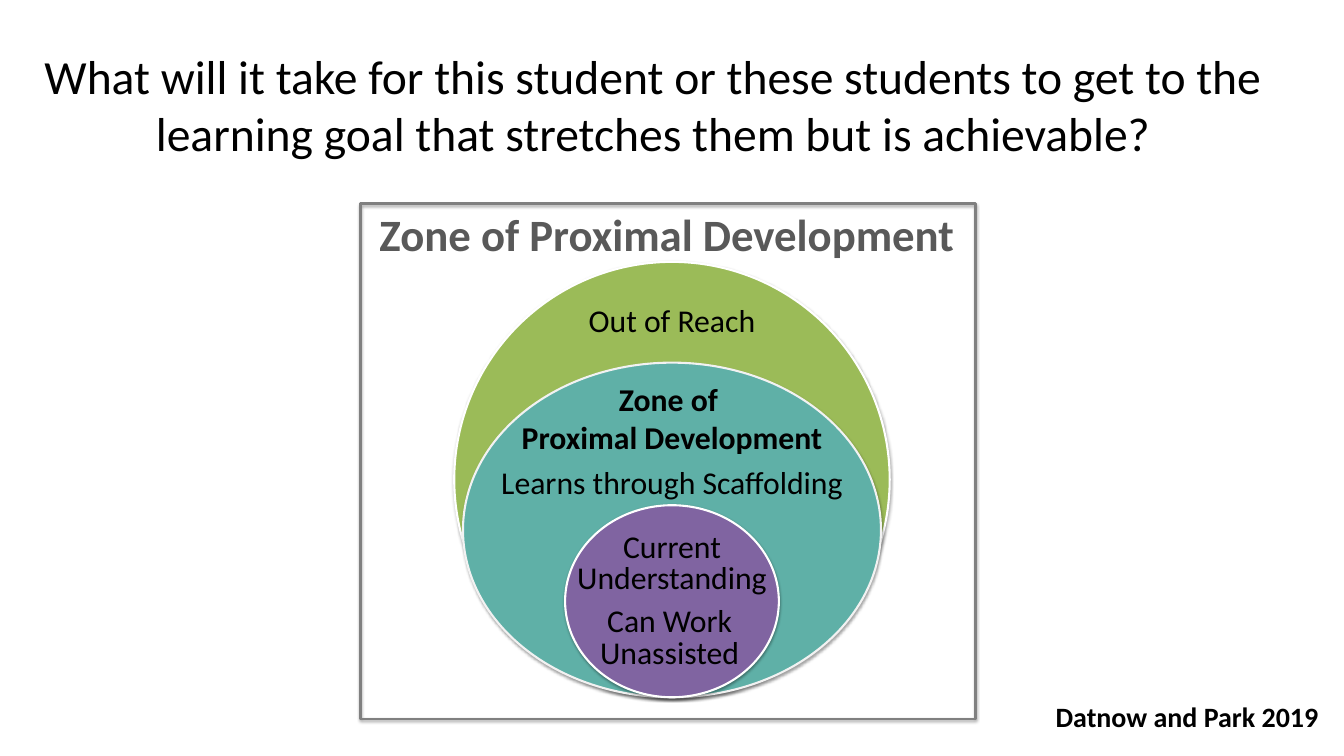
from dataclasses import dataclass

from lxml.etree import SubElement
from pptx import Presentation
from pptx.dml.color import RGBColor as Rgb
from pptx.enum.shapes import MSO_SHAPE as Shape
from pptx.enum.text import MSO_ANCHOR as Anchor, PP_ALIGN as Align
from pptx.oxml.ns import qn
from pptx.util import Cm, Pt


@dataclass(frozen=True)
class Theme:
    font: str = "Calibri"
    ink: str = "000000"
    gray: str = "595959"
    frame: str = "808080"
    white: str = "FFFFFF"
    pale: str = "F2F2F2"
    green: str = "9BBB58"
    teal: str = "5FB0A7"
    purple: str = "8064A1"
    title: int = 51
    head: int = 48
    label: int = 34
    credit: int = 30


@dataclass(frozen=True)
class Box:
    left: float
    top: float
    width: float
    height: float

    def cm(self) -> tuple:
        return Cm(self.left), Cm(self.top), Cm(self.width), Cm(self.height)


@dataclass(frozen=True)
class Ring:
    width: float
    height: float
    fill: str
    line: str


@dataclass(frozen=True)
class Label:
    box: Box
    lines: tuple
    size: int
    color: str
    bold: bool = False
    align: Align = Align.CENTER
    anchor: Anchor = Anchor.TOP
    pitch: int | None = None


LOOK = Theme()
MID = 25.4      # shared axis of the rings, cm
BASE = 26.36    # shared bottom of the rings, cm


def center(top: float, width: float, height: float, mid: float = MID) -> Box:
    return Box(mid - width / 2, top, width, height)


def note(top: float, height: float, *lines: str, width: float = 16.46,
         mid: float = MID, bold: bool = False, pitch: int | None = None) -> Label:
    return Label(center(top, width, height, mid), lines, LOOK.label, LOOK.ink,
                 bold, pitch=pitch)


RINGS = (
    Ring(16.46, 16.46, LOOK.green, LOOK.white),
    Ring(15.8, 12.65, LOOK.teal, LOOK.pale),
    Ring(8.08, 7.26, LOOK.purple, LOOK.white),
)

LABELS = (
    Label(Box(0.36, 0.41, 48.67, 7.01),
          ("What will it take for this student or these students to get to the "
           "learning goal that stretches them but is achievable?",),
          LOOK.title, LOOK.ink, anchor=Anchor.MIDDLE),
    Label(Box(10.77, 7.7, 28.88, 3.94), ("Zone of Proximal Development",),
          LOOK.head, LOOK.gray, bold=True),
    Label(Box(39.65, 26.31, 10.92, 1.55), ("Datnow and Park 2019",),
          LOOK.credit, LOOK.ink, bold=True, align=Align.LEFT),
    note(11.23, 1.7, "Out of Reach", width=10.85),
    note(14.22, 3.18, "Zone of ", "Proximal Development", bold=True),
    note(17.37, 1.7, "Learns through Scaffolding"),
    note(20.02, 2.69, "Current", "Understanding", pitch=34),
    note(22.83, 2.69, "Can Work", "Unassisted", width=15.47, mid=25.31, pitch=34),
)


def shade(shape) -> None:
    """Soft shadow straight below the shape."""
    shape.shadow.inherit = False
    effects = shape._element.spPr.find(qn("a:effectLst"))
    outer = SubElement(effects, qn("a:outerShdw"), blurRad=str(Pt(3.1)),
                       dist=str(Pt(1.8)), dir="5400000", rotWithShape="0")
    color = SubElement(outer, qn("a:srgbClr"), val=LOOK.ink)
    SubElement(color, qn("a:alpha"), val="35000")


def draw(slide, kind: Shape, box: Box, line: str, weight: float,
         fill: str | None = None) -> None:
    shape = slide.shapes.add_shape(kind, *box.cm())
    if fill:
        shape.fill.solid()
        shape.fill.fore_color.rgb = Rgb.from_string(fill)
    else:
        shape.fill.background()
    shape.line.color.rgb = Rgb.from_string(line)
    shape.line.width = Pt(weight)
    shade(shape)


def write(slide, label: Label) -> None:
    frame = slide.shapes.add_textbox(*label.box.cm()).text_frame
    frame.word_wrap = True
    frame.vertical_anchor = label.anchor
    for i, line in enumerate(label.lines):
        para = frame.add_paragraph() if i else frame.paragraphs[0]
        para.alignment = label.align
        if label.pitch:
            para.line_spacing = Pt(label.pitch)
        run = para.add_run()
        run.text = line
        font = run.font
        font.name, font.size, font.bold = LOOK.font, Pt(label.size), label.bold
        font.color.rgb = Rgb.from_string(label.color)


def main() -> None:
    deck = Presentation()
    deck.slide_width, deck.slide_height = Cm(50.8), Cm(28.58)
    slide = deck.slides.add_slide(deck.slide_layouts[6])

    # Nested zones, resting on one base
    for ring in RINGS:
        box = center(BASE - ring.height, ring.width, ring.height)
        draw(slide, Shape.OVAL, box, ring.line, 2.25, ring.fill)

    # Title, heading, credit and zone labels
    for label in LABELS:
        write(slide, label)

    # Frame around the diagram
    draw(slide, Shape.RECTANGLE, Box(13.64, 7.7, 23.22, 19.48), LOOK.frame, 3)

    deck.save("out.pptx")


if __name__ == "__main__":
    main()
